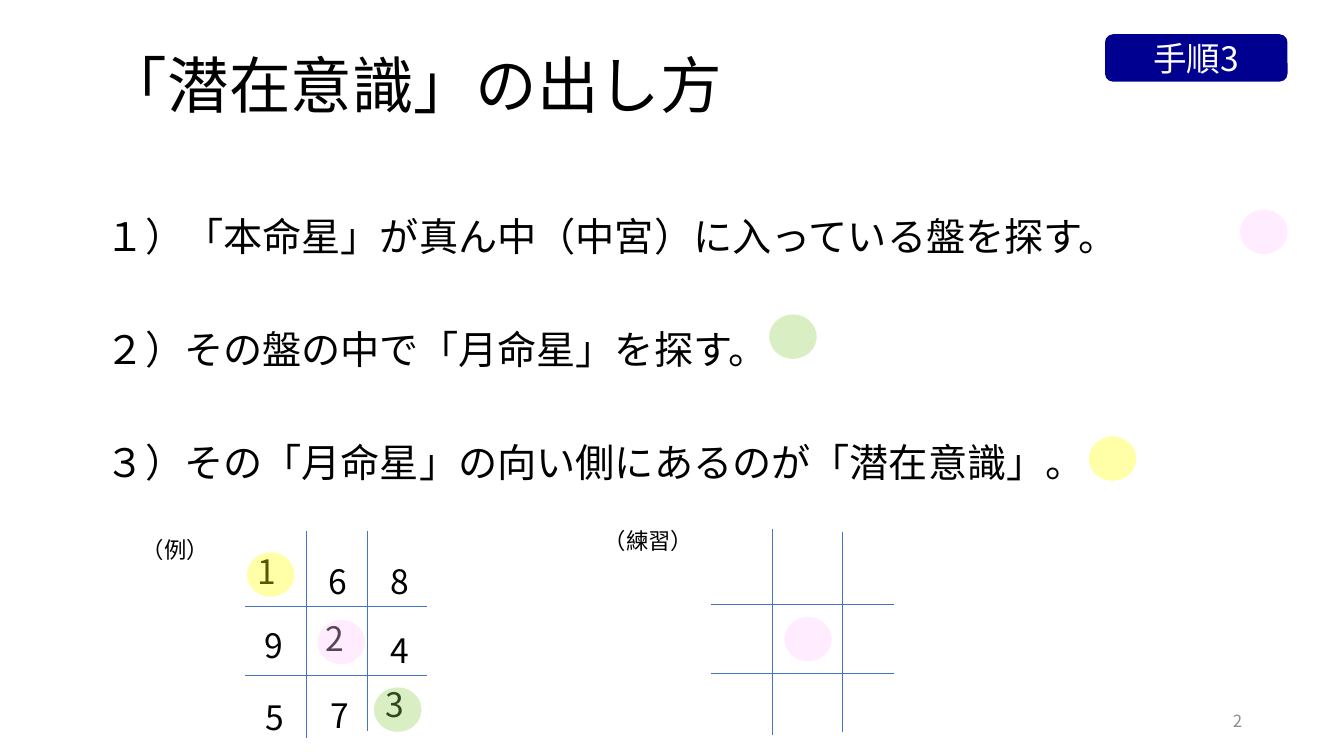
from dataclasses import dataclass

from lxml.etree import SubElement
from pptx import Presentation
from pptx.dml.color import RGBColor
from pptx.enum.shapes import MSO_CONNECTOR, MSO_SHAPE
from pptx.enum.text import MSO_ANCHOR, MSO_AUTO_SIZE, PP_ALIGN
from pptx.oxml.ns import qn
from pptx.util import Inches, Pt


@dataclass(frozen=True)
class Theme:
    font: str = "Noto Sans CJK JP"
    text: str = "000000"
    muted: str = "8C8C8C"
    badge: str = "000090"
    badge_text: str = "FFFFFF"
    grid: str = "4472C4"
    pink: str = "FFCCFF"
    green: str = "92D050"
    yellow: str = "FFFF00"
    opacity: int = 34
    title_size: int = 44
    body_size: int = 28
    number_size: int = 24
    label_size: int = 16
    footer_size: int = 12


THEME = Theme()

TITLE = "「潜在意識」の出し方"
STEPS = [
    "１）「本命星」が真ん中（中宮）に入っている盤を探す。",
    "２）その盤の中で「月命星」を探す。",
    "３）その「月命星」の向い側にあるのが「潜在意識」。",
]
BADGE = "手順3"
PAGE_NUMBER = "2"
LABELS = [("（例）", 1.31, 5.27, 1.08), ("（練習）", 5.89, 5.18, 1.24)]
DIGITS = [
    ("1", 2.46, 5.42), ("6", 3.16, 5.52), ("8", 3.77, 5.52),
    ("9", 2.53, 6.15), ("2", 3.13, 6.08), ("4", 3.77, 6.2),
    ("5", 2.54, 6.86), ("7", 3.18, 6.84), ("3", 3.73, 6.74),
]
BOARDS = [
    {"sides": (2.43, 4.24), "rows": (6.02, 6.7),
     "columns": ((3.04, 5.27, 7.32), (3.64, 5.27, 7.25))},
    {"sides": (7.05, 8.87), "rows": (6, 6.68),
     "columns": ((7.66, 5.25, 7.29), (8.35, 5.28, 7.26))},
]
MARKERS = {
    THEME.pink: [(3.15, 6.15), (12.3, 2.08), (7.78, 6.12)],
    THEME.green: [(3.71, 6.82), (7.63, 3.12)],
    THEME.yellow: [(2.45, 5.48), (10.8, 4.33)],
}


def place(shape, left, top, width, height):
    shape.left, shape.top = Inches(left), Inches(top)
    shape.width, shape.height = Inches(width), Inches(height)


def write_text(shape, *lines, size, color=THEME.text, align=PP_ALIGN.LEFT,
               anchor=MSO_ANCHOR.TOP, line_spacing=None, space_after=0):
    frame = shape.text_frame
    frame.word_wrap = True
    frame.auto_size = MSO_AUTO_SIZE.NONE
    frame.vertical_anchor = anchor
    for index, line in enumerate(lines):
        paragraph = frame.add_paragraph() if index else frame.paragraphs[0]
        paragraph.alignment = align
        paragraph.line_spacing = line_spacing
        paragraph.space_before = Pt(0)
        paragraph.space_after = Pt(space_after)
        run = paragraph.add_run()
        run.text = line
        run.font.size = Pt(size)
        run.font.name = THEME.font
        run.font.color.rgb = RGBColor.from_string(color)
        SubElement(run.font._element, qn("a:ea"), typeface=THEME.font)


def add_text(slide, text, left, top, width, height, **style):
    box = slide.shapes.add_textbox(*map(Inches, (left, top, width, height)))
    write_text(box, text, **style)


def add_filled_shape(slide, kind, left, top, width, height, color):
    shape = slide.shapes.add_shape(kind, *map(Inches, (left, top, width, height)))
    shape.shadow.inherit = False
    shape.fill.solid()
    shape.fill.fore_color.rgb = RGBColor.from_string(color)
    shape.line.fill.background()
    return shape


def add_marker(slide, left, top, color):
    marker = add_filled_shape(slide, MSO_SHAPE.OVAL, left, top, 0.47, 0.44, color)
    fill_color = marker._element.spPr.find(qn("a:solidFill"))[0]
    SubElement(fill_color, qn("a:alpha"), val=str(THEME.opacity * 1000))


def add_line(slide, *ends):
    line = slide.shapes.add_connector(MSO_CONNECTOR.STRAIGHT, *map(Inches, ends))
    line.line.color.rgb = RGBColor.from_string(THEME.grid)
    line.line.width = Pt(0.5)
    SubElement(line._element.spPr, qn("a:effectLst"))


def add_board(slide, board):
    left, right = board["sides"]
    for row in board["rows"]:
        add_line(slide, left, row, right, row)
    for column, top, bottom in board["columns"]:
        add_line(slide, column, top, column, bottom)


def main():
    presentation = Presentation()
    presentation.slide_width = Inches(13.33)
    presentation.slide_height = Inches(7.5)
    slide = presentation.slides.add_slide(presentation.slide_layouts[1])
    title, body = slide.placeholders

    place(title, 0.95, 0.45, 6.68, 0.86)
    write_text(title, TITLE, size=THEME.title_size, anchor=MSO_ANCHOR.MIDDLE,
               line_spacing=0.9)
    place(body, 0.95, 2.08, 11.7, 3.46)
    write_text(body, *STEPS, size=THEME.body_size, line_spacing=Pt(32),
               space_after=48.7)
    for paragraph in body.text_frame.paragraphs:
        properties = paragraph._p.get_or_add_pPr()
        properties.set("marL", "0")
        properties.set("indent", "0")
        SubElement(properties, qn("a:buNone"))

    add_text(slide, PAGE_NUMBER, 9.42, 6.95, 3, 0.4, size=THEME.footer_size,
             color=THEME.muted, align=PP_ALIGN.RIGHT, anchor=MSO_ANCHOR.MIDDLE)
    badge = add_filled_shape(slide, MSO_SHAPE.ROUNDED_RECTANGLE,
                             10.96, 0.34, 1.81, 0.47, THEME.badge)
    write_text(badge, BADGE, size=THEME.number_size, color=THEME.badge_text,
               align=PP_ALIGN.CENTER, anchor=MSO_ANCHOR.MIDDLE)

    for board in BOARDS:
        add_board(slide, board)
    for text, left, top, width in LABELS:
        add_text(slide, text, left, top, width, 0.37, size=THEME.label_size)
    for digit, left, top in DIGITS:
        add_text(slide, digit, left, top, 0.47, 0.5, size=THEME.number_size)
    for color, positions in MARKERS.items():
        for left, top in positions:
            add_marker(slide, left, top, color)

    presentation.save("out.pptx")


if __name__ == "__main__":
    main()
